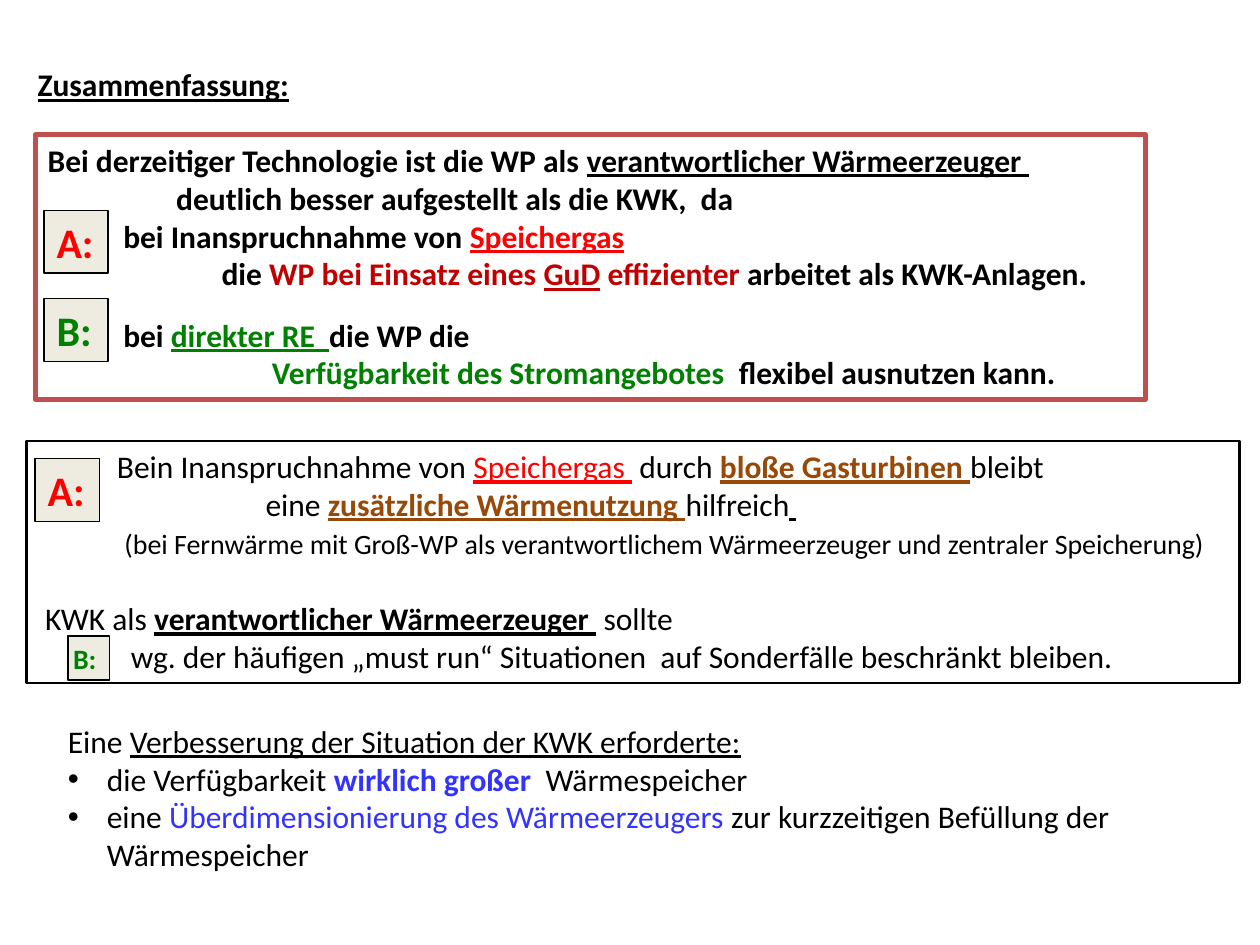
from lxml.etree import SubElement
from pptx import Presentation
from pptx.dml.color import RGBColor
from pptx.enum.shapes import MSO_SHAPE
from pptx.enum.text import MSO_ANCHOR, MSO_AUTO_SIZE, PP_ALIGN
from pptx.oxml.ns import qn
from pptx.util import Inches, Pt

BLACK, RED, DARK_RED = "000000", "FF0000", "C00000"
GREEN, BROWN, BLUE = "008000", "984807", "3333FF"
FRAME_RED, CREAM = "C0504D", "EEECE1"

BOLD = {"bold": True}
UNDERLINED = {"underline": True}
STRONG = {**BOLD, **UNDERLINED}


def color(code):
    return RGBColor.from_string(code)


class SlideBuilder:
    """Holds the text style and the slide being filled.

    A line is (options, spans); a span is (text, colour, font format).
    Options: indent in inches, before and size in points, bullet as a flag.
    """

    font_name = "Calibri"
    bullet_indent = 0.31

    def __init__(self, page):
        self.page = page

    def fill_text(self, box, lines, size, inset=None):
        frame = box.text_frame
        settings = {"word_wrap": True, "vertical_anchor": MSO_ANCHOR.TOP,
                    "auto_size": MSO_AUTO_SIZE.SHAPE_TO_FIT_TEXT}
        if inset is not None:
            for side in ("left", "top", "right", "bottom"):
                settings[f"margin_{side}"] = Inches(inset)
        for name, value in settings.items():
            setattr(frame, name, value)
        for number, (options, spans) in enumerate(lines):
            para = frame.add_paragraph() if number else frame.paragraphs[0]
            para.alignment = PP_ALIGN.LEFT
            para.space_before = Pt(options.get("before", 0))
            self.indent(para, options)
            for text, code, style in spans:
                span = para.add_run()
                span.text = text
                span.font.color.rgb = color(code)
                values = {"name": self.font_name, "size": Pt(options.get("size", size)), **style}
                for name, value in values.items():
                    setattr(span.font, name, value)

    def indent(self, para, options):
        bullet = options.get("bullet", False)
        left = Inches(self.bullet_indent if bullet else options.get("indent", 0))
        properties = para._p.get_or_add_pPr()
        properties.set("marL", str(left))
        properties.set("indent", str(-left if bullet else 0))
        if bullet:
            SubElement(properties, qn("a:buFont"), typeface="Arial")
            SubElement(properties, qn("a:buChar"), char="•")

    def text(self, left, top, width, height, lines, size=18):
        box = self.page.shapes.add_textbox(*map(Inches, (left, top, width, height)))
        self.fill_text(box, lines, size)

    def panel(self, left, top, width, height, lines, line, weight, fill=None, size=18, inset=None):
        box = self.page.shapes.add_shape(
            MSO_SHAPE.RECTANGLE, *map(Inches, (left, top, width, height)))
        box.shadow.inherit = False
        if fill:
            box.fill.solid()
            box.fill.fore_color.rgb = color(fill)
        else:
            box.fill.background()
        box.line.color.rgb = color(line)
        box.line.width = Pt(weight)
        self.fill_text(box, lines, size, inset)

    def label(self, left, top, letter, code, width=0.51, height=0.5, size=24, inset=None):
        lines = [({}, [(f"{letter}:", code, BOLD)])]
        self.panel(left, top, width, height, lines, BLACK, 1, CREAM, size, inset)


CONCLUSION = [
    ({}, [("Bei derzeitiger Technologie ist die WP als ", BLACK, BOLD),
          ("verantwortlicher Wärmeerzeuger ", BLACK, STRONG)]),
    ({"indent": 1.02}, [("deutlich besser aufgestellt als die KWK,  da", BLACK, BOLD)]),
    ({"indent": 0.6}, [("bei Inanspruchnahme von ", BLACK, BOLD),
                       ("Speichergas", RED, STRONG)]),
    ({"indent": 1.38}, [("die ", BLACK, BOLD),
                        ("WP bei Einsatz eines ", DARK_RED, BOLD),
                        ("GuD", DARK_RED, STRONG),
                        (" effizienter ", DARK_RED, BOLD),
                        ("arbeitet als KWK-Anlagen.", BLACK, BOLD)]),
    ({"indent": 0.6, "before": 13.4}, [("bei ", BLACK, BOLD),
                                       ("direkter RE  ", GREEN, STRONG),
                                       ("die WP die", BLACK, BOLD)]),
    ({"indent": 1.78}, [("Verfügbarkeit des Stromangebotes  ", GREEN, BOLD),
                        ("flexibel ausnutzen kann.", BLACK, BOLD)]),
]

CHP_ROLE = [
    ({"indent": 0.62}, [("Bein Inanspruchnahme von ", BLACK, {}),
                        ("Speichergas ", RED, UNDERLINED),
                        (" durch ", BLACK, {}),
                        ("bloße Gasturbinen ", BROWN, STRONG),
                        ("bleibt", BLACK, {})]),
    ({"indent": 1.8}, [("eine ", BLACK, {}),
                       ("zusätzliche Wärmenutzung ", BROWN, STRONG),
                       ("hilfreich", BLACK, {}),
                       (" ", BLACK, STRONG)]),
    ({"indent": 0.68, "before": 2, "size": 16},
     [("(bei Fernwärme mit Groß-WP als verantwortlichem Wärmeerzeuger "
       "und zentraler Speicherung)", BLACK, {})]),
    ({"indent": 0.05, "before": 22.4}, [("KWK als ", BLACK, {}),
                                        ("verantwortlicher Wärmeerzeuger ", BLACK, STRONG),
                                        (" sollte", BLACK, {})]),
    ({"indent": 0.73}, [("wg. der häufigen „must run“ Situationen  "
                         "auf Sonderfälle beschränkt bleiben.", BLACK, {})]),
]

IMPROVEMENT = [
    ({}, [("Eine ", BLACK, {}),
          ("Verbesserung der Situation der KWK erforderte:", BLACK, UNDERLINED)]),
    ({"bullet": True}, [("die Verfügbarkeit ", BLACK, {}),
                        ("wirklich großer  ", BLUE, BOLD),
                        ("Wärmespeicher", BLACK, {})]),
    ({"bullet": True}, [("eine ", BLACK, {}),
                        ("Überdimensionierung des Wärmeerzeugers ", BLUE, {}),
                        ("zur kurzzeitigen Befüllung der Wärmespeicher", BLACK, {})]),
]


def main():
    deck = Presentation()
    deck.slide_width, deck.slide_height = Inches(10), Inches(7.5)
    builder = SlideBuilder(deck.slides.add_slide(deck.slide_layouts[6]))

    builder.panel(0.28, 1.07, 8.81, 2.1, CONCLUSION, FRAME_RED, 3)
    builder.label(0.35, 1.67, "A", RED)
    builder.label(0.35, 2.37, "B", GREEN)
    builder.panel(0.21, 3.5, 9.63, 1.92, CHP_ROLE, BLACK, 1.5)
    builder.text(0.44, 5.68, 8.66, 1.31, IMPROVEMENT)
    builder.text(0.2, 0.47, 2.86, 0.4, [({}, [("Zusammenfassung:", BLACK, STRONG)])])
    builder.label(0.28, 3.64, "A", RED)
    builder.label(0.54, 5.05, "B", GREEN, width=0.33, height=0.35, size=16, inset=0.04)

    deck.save("out.pptx")


if __name__ == "__main__":
    main()
